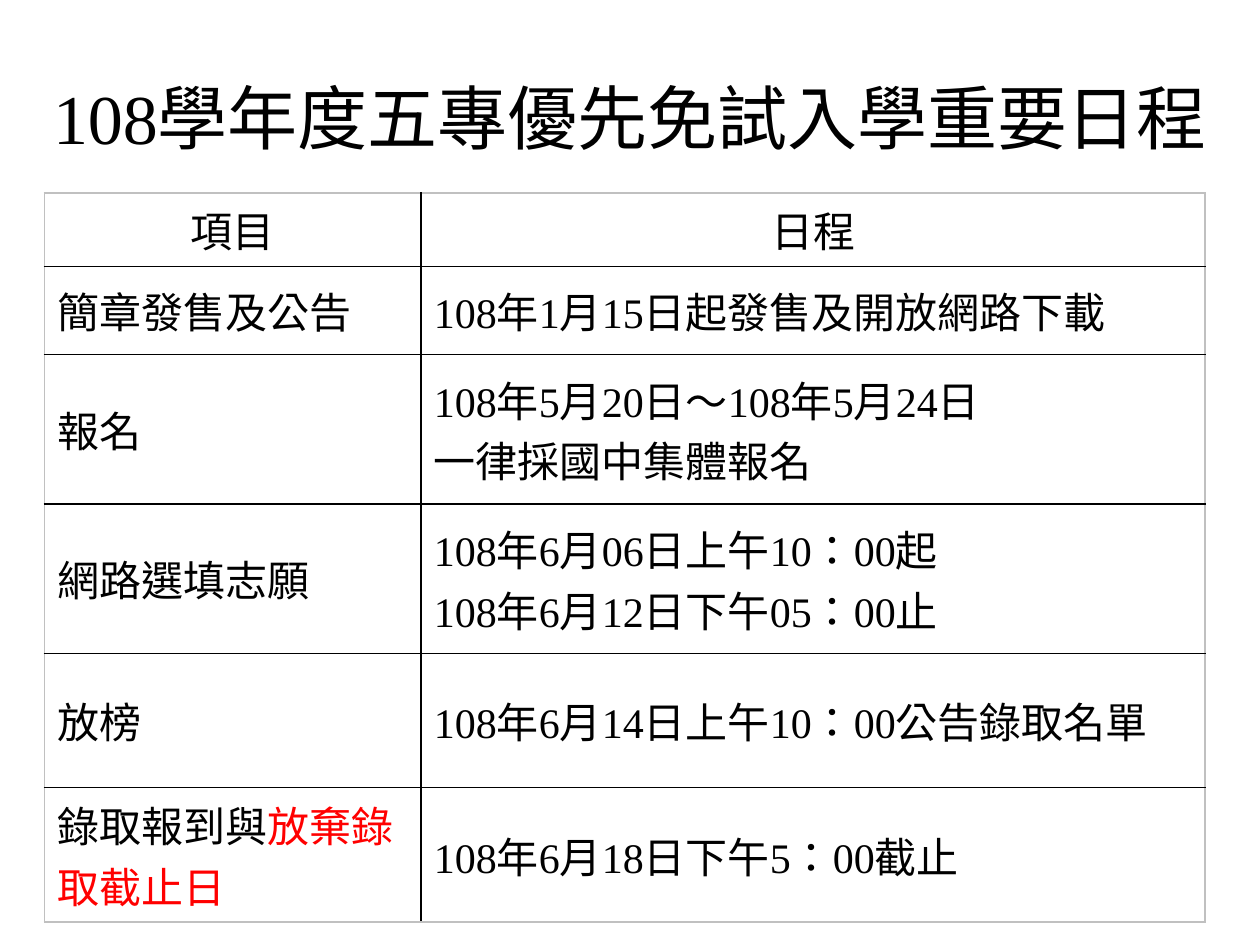
from pptx import Presentation
from pptx.dml.color import RGBColor
from pptx.enum.lang import MSO_LANGUAGE_ID
from pptx.enum.text import MSO_ANCHOR, PP_ALIGN
from pptx.oxml.ns import qn
from pptx.util import Pt
from lxml.etree import SubElement

FONT = "Times New Roman"
COLORS = {"text": "000000", "alert": "FF0000", "grid": "000000", "frame": "C0C0C0"}
COLUMN_WIDTHS = [215.3, 447.8]
ROW_HEIGHTS = [42, 50.4, 85.4, 85.4, 76.8, 76.8]

# Each cell is a list of paragraphs; each paragraph is a list of (text, color) runs
SCHEDULE = [
    ([[("項目", "text")]], [[("日程", "text")]]),
    ([[("簡章發售及公告", "text")]], [[("108年1月15日起發售及開放網路下載", "text")]]),
    ([[("報名", "text")]],
     [[("108年5月20日～108年5月24日", "text")], [("一律採國中集體報名", "text")]]),
    ([[("網路選填志願", "text")]],
     [[("108年6月06日上午10：00起", "text")], [("108年6月12日下午05：00止", "text")]]),
    ([[("放榜", "text")]], [[("108年6月14日上午10：00公告錄取名單", "text")]]),
    ([[("錄取報到與", "text"), ("放棄錄取截止日", "alert")]],
     [[("108年6月18日下午5：00截止", "text")]]),
]


def write_text(text_frame, paragraphs, size=24, align=PP_ALIGN.LEFT):
    for index, runs in enumerate(paragraphs):
        paragraph = text_frame.add_paragraph() if index else text_frame.paragraphs[0]
        paragraph.alignment = align
        for text, color in runs:
            run = paragraph.add_run()
            run.text = text
            run.font.name = FONT
            run.font.size = Pt(size)
            run.font.language_id = MSO_LANGUAGE_ID.TRADITIONAL_CHINESE
            run.font.color.rgb = RGBColor.from_string(COLORS[color])


def set_borders(cell, outer_sides):
    properties = cell._tc.get_or_add_tcPr()
    for side in "LRTB":
        line = SubElement(properties, qn(f"a:ln{side}"), w=str(Pt(1)))
        fill = SubElement(line, qn("a:solidFill"))
        color = COLORS["frame" if side in outer_sides else "grid"]
        SubElement(fill, qn("a:srgbClr"), val=color)


def add_title(slide, left, top, width, height):
    box = slide.shapes.add_textbox(Pt(left), Pt(top), Pt(width), Pt(height))
    box.text_frame.word_wrap = True
    box.text_frame.vertical_anchor = MSO_ANCHOR.MIDDLE
    write_text(box.text_frame, [[("108學年度五專優先免試入學重要日程", "text")]],
               size=40, align=PP_ALIGN.CENTER)


def add_schedule(slide, left, top):
    table = slide.shapes.add_table(
        len(ROW_HEIGHTS), len(COLUMN_WIDTHS), Pt(left), Pt(top),
        Pt(sum(COLUMN_WIDTHS)), Pt(sum(ROW_HEIGHTS))).table
    table.first_row = table.horz_banding = False
    for column, width in zip(table.columns, COLUMN_WIDTHS):
        column.width = Pt(width)
    for row, height in zip(table.rows, ROW_HEIGHTS):
        row.height = Pt(height)

    last_row = len(SCHEDULE) - 1
    for row_index, contents in enumerate(SCHEDULE):
        for column_index, paragraphs in enumerate(contents):
            cell = table.cell(row_index, column_index)
            # Light frame around the table, dark lines inside it
            outer_sides = "LR"[column_index]
            outer_sides += {0: "T", last_row: "B"}.get(row_index, "")
            set_borders(cell, outer_sides)
            cell.fill.background()
            cell.vertical_anchor = MSO_ANCHOR.MIDDLE
            align = PP_ALIGN.LEFT if row_index else PP_ALIGN.CENTER
            write_text(cell.text_frame, paragraphs, align=align)


def main():
    presentation = Presentation()
    presentation.slide_width, presentation.slide_height = Pt(720), Pt(540)
    slide = presentation.slides.add_slide(presentation.slide_layouts[6])
    add_title(slide, 0, 21.6, 720, 90)
    add_schedule(slide, 25.4, 110.2)
    presentation.save("out.pptx")


if __name__ == "__main__":
    main()
